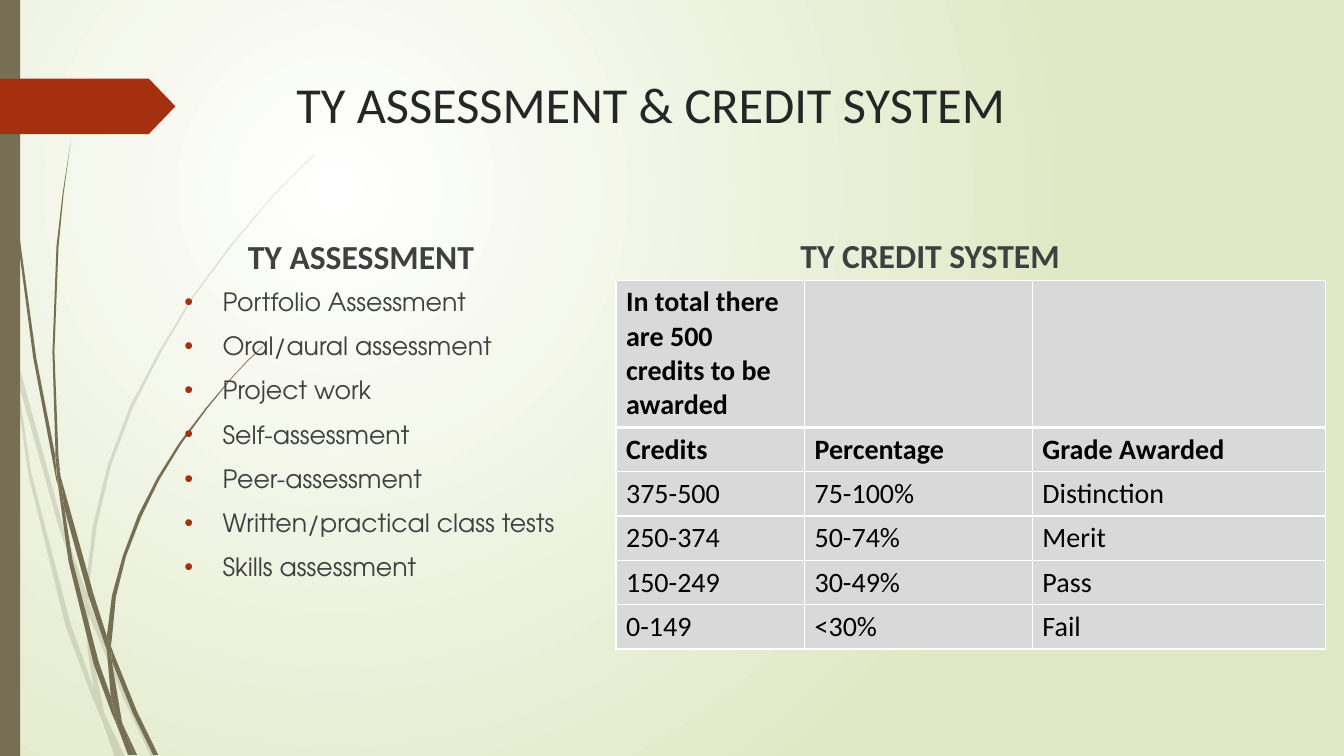
import pptx
import pptx.dml.color
import pptx.enum.shapes
import pptx.enum.text
import pptx.oxml
import pptx.oxml.ns
import pptx.util
from dataclasses import dataclass

TITLE = "TY ASSESSMENT & CREDIT SYSTEM"
ASSESSMENT_HEADING = "TY ASSESSMENT"
CREDIT_HEADING = "TY CREDIT SYSTEM"
ASSESSMENTS = ["Portfolio Assessment", "Oral/aural assessment", "Project work",
               "Self-assessment", "Peer-assessment",
               "Written/practical class tests", "Skills assessment"]
CREDITS = [
    ("In total there are 500 credits to be awarded", "", ""),
    ("Credits", "Percentage", "Grade Awarded"),
    ("375-500", "75-100%", "Distinction"),
    ("250-374", "50-74%", "Merit"),
    ("150-249", "30-49%", "Pass"),
    ("0-149", "<30%", "Fail"),
]
HEADER_ROWS = 2
COLUMN_WIDTHS = (1.87, 2.26, 2.91)
ROW_HEIGHTS = (1.46,) + (0.44,) * 5

# Corners of each blade of grass, in inches.
PALE_BLADES = [
    [(0.11, 3.5), (0.09, 3.22), (0, 2.82), (0, 2.99), (0.1, 3.44)],
    [(0.58, 5.22), (0.84, 5.99), (0.85, 5.86), (0.62, 5.2), (0.14, 3.45),
     (0.17, 3.76)],
    [(0.92, 6.07), (0.88, 5.96), (0.88, 6.1), (1.23, 6.94), (1.5, 7.51),
     (1.55, 7.51), (1.27, 6.92)],
    [(1.19, 7.51), (1.24, 7.51), (1.05, 7.11)],
    [(0.93, 6.83), (0.7, 6.19), (0.31, 4.69), (0.17, 3.76), (0.11, 3.5),
     (0.28, 4.7), (0.65, 6.21), (0.92, 6.93), (1.01, 7.14), (0.99, 7.07)],
    [(0.84, 5.99), (0.87, 6.46), (0.93, 6.83), (0.96, 6.92), (1.05, 7.11),
     (1.03, 7.06), (0.91, 6.46), (0.88, 6.1), (0.88, 6.08)],
    [(0.88, 5.84), (0.96, 5.22), (1.1, 4.62), (1.32, 4.04), (1.6, 3.49),
     (1.92, 2.95), (2.29, 2.45), (2.68, 1.98), (2.9, 1.75), (3.12, 1.54),
     (3.12, 1.53), (2.89, 1.75), (2.68, 1.97), (2.28, 2.44), (1.91, 2.94),
     (1.58, 3.48), (1.29, 4.03), (1.07, 4.61), (0.92, 5.22), (0.85, 5.84),
     (0.85, 5.86), (0.88, 5.96)],
    [(1.01, 7.14), (1.14, 7.51), (1.19, 7.51)],
    [(0.88, 6.08), (0.88, 6.1), (0.88, 5.96), (0.85, 5.86), (0.84, 5.99)],
    [(0.96, 6.92), (0.93, 6.83), (0.99, 7.07), (1.01, 7.14), (1.19, 7.51),
     (1.05, 7.11)],
]
DARK_BLADES = [
    [(0.07, 1.1), (0.17, 2.33), (0.33, 3.55), (0.56, 4.77), (0.57, 4.81),
     (0.55, 4.57), (0.55, 4.53), (0.36, 3.55), (0.19, 2.32), (0.08, 1.09),
     (0.05, 0.48), (0.04, 0), (0.03, 0), (0.04, 0.48)],
    [(0.88, 5.92), (1.06, 6.45), (1.06, 6.33), (1.06, 6.31), (0.93, 5.9),
     (0.6, 4.72), (0.64, 5.05)],
    [(1.13, 6.49), (1.1, 6.41), (1.11, 6.56), (1.32, 7.08), (1.52, 7.49),
     (1.57, 7.49), (1.36, 7.06)],
    [(1.1, 6.91), (0.98, 6.57), (0.72, 5.56), (0.64, 5.05), (0.57, 4.77),
     (0.68, 5.57), (0.93, 6.59), (1.11, 7.08), (1.17, 7.22), (1.16, 7.17)],
    [(0.6, 4.72), (0.58, 4.53), (0.54, 3.49), (0.58, 2.45), (0.63, 1.93),
     (0.7, 1.41), (0.62, 1.93), (0.56, 2.45), (0.52, 3.49), (0.55, 4.49)],
    [(1.33, 7.49), (1.36, 7.49), (1.22, 7.19)],
    [(0.57, 4.77), (0.64, 5.05), (0.6, 4.72), (0.55, 4.49), (0.55, 4.53)],
    [(1.11, 6.33), (1.15, 5.92), (1.25, 5.52), (1.4, 5.13), (1.58, 4.76),
     (1.8, 4.4), (2.05, 4.06), (2.31, 3.74), (2.45, 3.59), (2.61, 3.44),
     (2.6, 3.44), (2.45, 3.58), (2.31, 3.73), (2.04, 4.05), (1.78, 4.39),
     (1.56, 4.74), (1.37, 5.11), (1.22, 5.51), (1.11, 5.91), (1.06, 6.31),
     (1.1, 6.41)],
    [(1.17, 7.22), (1.27, 7.49), (1.31, 7.49)],
    [(1.06, 6.45), (1.1, 6.91), (1.16, 7.06), (1.22, 7.19), (1.21, 7.16),
     (1.11, 6.56), (1.09, 6.51)],
    [(1.06, 6.45), (1.09, 6.51), (1.11, 6.56), (1.1, 6.41), (1.06, 6.31),
     (1.06, 6.33)],
    [(1.16, 7.06), (1.1, 6.91), (1.16, 7.17), (1.17, 7.22), (1.3, 7.49),
     (1.33, 7.49), (1.22, 7.19)],
]
UNITS_PER_INCH = 100


@dataclass(frozen=True)
class Theme:
    glow: str = "FFFFFF"
    backdrop: str = "DFE8C4"
    grass: str = "766F54"
    accent: str = "A53010"
    title: str = "262626"
    body: str = "404040"
    cell: str = "D9D9D9"
    cell_text: str = "000000"
    rule: str = "FFFFFF"
    font: str = "Calibri"
    list_font: str = "TeX Gyre Adventor"
    title_size: int = 36
    heading_size: int = 24
    cell_size: int = 20
    list_size: int = 18


THEME = Theme()
SHAPES = pptx.enum.shapes.MSO_SHAPE
ANCHORS = pptx.enum.text.MSO_ANCHOR


def inches(*lengths):
    return [pptx.util.Inches(length) for length in lengths]


def rgb(color):
    return pptx.dml.color.RGBColor.from_string(color)


def xml(markup):
    return pptx.oxml.parse_xml(
        markup.replace(" ", f" {pptx.oxml.ns.nsdecls('a')} ", 1))


def write(frame, lines, *, size, color, font=THEME.font, bold=False,
          bullet=None, gap=0):
    for index, line in enumerate(lines):
        paragraph = frame.paragraphs[0] if index == 0 else frame.add_paragraph()
        if index and gap:
            paragraph.space_before = pptx.util.Pt(gap)
        if bullet:
            properties = paragraph._p.get_or_add_pPr()
            indent = pptx.util.Inches(0.38)
            properties.set("marL", str(indent))
            properties.set("indent", str(-indent))
            properties.append(xml(f'<a:buClr ><a:srgbClr val="{bullet}"/></a:buClr>'))
            properties.append(xml('<a:buFont typeface="Arial"/>'))
            properties.append(xml('<a:buChar char="•"/>'))
        run = paragraph.add_run()
        run.text = line
        run.font.name = font
        run.font.size = pptx.util.Pt(size)
        run.font.bold = bold
        run.font.color.rgb = rgb(color)


def add_text(slide, place, lines, anchor=ANCHORS.TOP, **text_format):
    frame = slide.shapes.add_textbox(*inches(*place)).text_frame
    frame.word_wrap = True
    frame.vertical_anchor = anchor
    write(frame, lines, **text_format)


def paint(shape, color, opacity=100):
    shape.shadow.inherit = False
    shape.line.fill.background()
    shape.fill.solid()
    shape.fill.fore_color.rgb = rgb(color)
    if opacity < 100:
        tint = shape.fill._xPr.find(".//" + pptx.oxml.ns.qn("a:srgbClr"))
        tint.append(xml(f'<a:alpha val="{opacity * 1000}"/>'))


def add_blade(slide, corners, opacity):
    outline = [(x * UNITS_PER_INCH, y * UNITS_PER_INCH) for x, y in corners]
    builder = slide.shapes.build_freeform(
        *outline[0], scale=pptx.util.Inches(1) / UNITS_PER_INCH)
    builder.add_line_segments(outline[1:], close=True)
    paint(builder.convert_to_shape(), THEME.grass, opacity)


def set_backdrop(slide):
    fill = slide.background.fill
    fill.gradient()
    for stop, color in zip(fill.gradient_stops, (THEME.glow, THEME.backdrop)):
        stop.color.rgb = rgb(color)
    gradient = slide.element.find(".//" + pptx.oxml.ns.qn("a:gradFill"))
    linear = gradient.find(pptx.oxml.ns.qn("a:lin"))
    gradient.replace(linear, xml(
        '<a:path path="circle"><a:fillToRect l="50000" t="50000" '
        'r="100000" b="100000"/></a:path>'))


def add_credit_table(slide, left, top):
    table = slide.shapes.add_table(
        len(CREDITS), len(COLUMN_WIDTHS),
        *inches(left, top, sum(COLUMN_WIDTHS), sum(ROW_HEIGHTS))).table
    table.horz_banding = False
    for column, width in zip(table.columns, COLUMN_WIDTHS):
        column.width = pptx.util.Inches(width)
    for index, (row, height, texts) in enumerate(zip(table.rows, ROW_HEIGHTS, CREDITS)):
        row.height = pptx.util.Inches(height)
        widths = {"L": 1, "R": 1, "T": 3 if index == 1 else 1,
                  "B": 3 if index == 0 else 1}
        for cell, text in zip(row.cells, texts):
            for side, width in widths.items():
                cell._tc.get_or_add_tcPr().append(xml(
                    f'<a:ln{side} w="{pptx.util.Pt(width)}"><a:solidFill>'
                    f'<a:srgbClr val="{THEME.rule}"/></a:solidFill></a:ln{side}>'))
            cell.fill.solid()
            cell.fill.fore_color.rgb = rgb(THEME.cell)
            if text:
                write(cell.text_frame, [text], size=THEME.cell_size,
                      color=THEME.cell_text, bold=index < HEADER_ROWS)


def main():
    deck = pptx.Presentation()
    deck.slide_width, deck.slide_height = inches(13.33, 7.5)
    slide = deck.slides.add_slide(deck.slide_layouts[6])
    set_backdrop(slide)
    for blades, opacity in ((PALE_BLADES, 20), (DARK_BLADES, 100)):
        for corners in blades:
            add_blade(slide, corners, opacity)
    paint(slide.shapes.add_shape(SHAPES.RECTANGLE, *inches(0, 0, 0.2, 7.5)), THEME.grass)
    title_tag = slide.shapes.add_shape(SHAPES.PENTAGON, *inches(0, 0.78, 1.74, 0.55))
    title_tag.adjustments[0] = 0.48
    paint(title_tag, THEME.accent)

    add_text(slide, (2.84, 0.68, 7.62, 0.87), [TITLE],
             size=THEME.title_size, color=THEME.title)
    for heading, place in ((ASSESSMENT_HEADING, (2.36, 2.16, 3.13, 0.63)),
                           (CREDIT_HEADING, (7.84, 2.15, 4.74, 0.63))):
        add_text(slide, place, [heading], anchor=ANCHORS.BOTTOM,
                 size=THEME.heading_size, color=THEME.body, bold=True)
    add_text(slide, (1.73, 2.79, 4.73, 3.67), ASSESSMENTS, size=THEME.list_size,
             color=THEME.body, font=THEME.list_font, bullet=THEME.accent, gap=10)
    add_credit_table(slide, 6.11, 2.78)
    deck.save("out.pptx")


if __name__ == "__main__":
    main()
